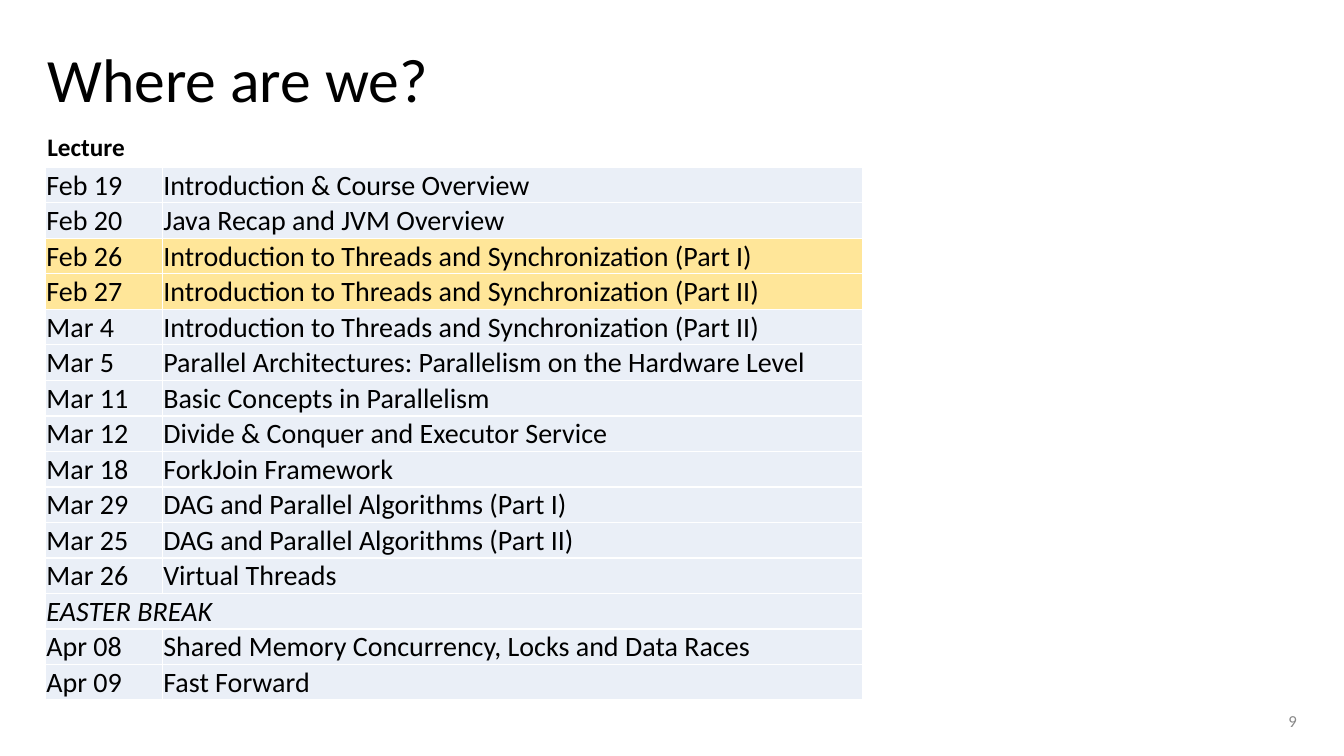
from dataclasses import dataclass

from lxml.etree import SubElement as Sub
from pptx import Presentation
from pptx.dml.color import RGBColor as Color
from pptx.enum.text import MSO_ANCHOR as Anchor, PP_ALIGN as Align
from pptx.oxml.ns import qn
from pptx.util import Inches, Pt


@dataclass(frozen=True)
class Theme:
    font: str = "Calibri"
    ink: str = "000000"
    muted: str = "888888"
    band: str = "EAEFF7"
    mark: str = "FFE699"
    rule: str = "FFFFFF"
    title: int = 44
    body: int = 20
    label: int = 18
    small: int = 12


THEME = Theme()
WIDE, HIGH = Inches(13.33), Inches(7.5)
DATE_SHARE = 14.32
MARKED = {"Feb 26", "Feb 27"}
PLAN = [
    ("Feb 19", "Introduction & Course Overview"),
    ("Feb 20", "Java Recap and JVM Overview"),
    ("Feb 26", "Introduction to Threads and Synchronization (Part I)"),
    ("Feb 27", "Introduction to Threads and Synchronization (Part II)"),
    ("Mar 4", "Introduction to Threads and Synchronization (Part II)"),
    ("Mar 5", "Parallel Architectures: Parallelism on the Hardware Level"),
    ("Mar 11", "Basic Concepts in Parallelism"),
    ("Mar 12", "Divide & Conquer and Executor Service"),
    ("Mar 18", "ForkJoin Framework"),
    ("Mar 29", "DAG and Parallel Algorithms (Part I)"),
    ("Mar 25", "DAG and Parallel Algorithms (Part II)"),
    ("Mar 26", "Virtual Threads"),
    ("EASTER BREAK", None),
    ("Apr 08", "Shared Memory Concurrency, Locks and Data Races"),
    ("Apr 09", "Fast Forward"),
]


def share(part, whole):
    return round(whole * part / 100)


def area(left, top, width, height):
    return share(left, WIDE), share(top, HIGH), share(width, WIDE), share(height, HIGH)


def write(frame, text, size=THEME.body, color=THEME.ink, bold=False,
          italic=False, align=Align.LEFT, line=1.0):
    para = frame.paragraphs[0]
    para.alignment = align
    para.line_spacing = line
    run = para.add_run()
    run.text = text
    font = run.font
    font.name, font.size = THEME.font, Pt(size)
    font.bold, font.italic = bold, italic
    font.color.rgb = Color.from_string(color)


def label(slide, box, text, anchor=Anchor.TOP, pad=0.05, **style):
    frame = slide.shapes.add_textbox(*box).text_frame
    frame.word_wrap = True
    frame.vertical_anchor = anchor
    frame.margin_top = frame.margin_bottom = Inches(pad)
    write(frame, text, **style)


def edge(cell):
    props = cell._tc.get_or_add_tcPr()
    for side in ("lnL", "lnR", "lnT", "lnB"):
        line = Sub(props, qn(f"a:{side}"), w=str(Pt(1)))
        fill = Sub(line, qn("a:solidFill"))
        Sub(fill, qn("a:srgbClr"), val=THEME.rule)


def paint(cell, color, anchor):
    edge(cell)
    cell.fill.solid()
    cell.fill.fore_color.rgb = Color.from_string(color)
    cell.vertical_anchor = anchor
    cell.margin_left = cell.margin_right = cell.margin_top = Inches(0.01)
    cell.margin_bottom = 0


def agenda(slide, box):
    width, height = box[2:]
    table = slide.shapes.add_table(len(PLAN), 2, *box).table
    table.first_row = table.horz_banding = False
    first = share(DATE_SHARE, width)
    table.columns[0].width = first
    table.columns[1].width = width - first
    for row, (date, topic) in enumerate(PLAN):
        table.rows[row].height = height // len(PLAN)
        day, theme = table.cell(row, 0), table.cell(row, 1)
        color = THEME.mark if date in MARKED else THEME.band
        paint(day, color, Anchor.MIDDLE)
        paint(theme, color, Anchor.BOTTOM)
        write(day.text_frame, date, italic=topic is None)
        if topic is None:
            day.merge(theme)
        else:
            write(theme.text_frame, topic)


def lecture(slide):
    label(slide, area(2.78, 2.67, 94.45, 16.53), "Where are we?",
          anchor=Anchor.MIDDLE, pad=0.1, size=THEME.title, line=0.9)
    label(slide, area(70.67, 92.67, 26.56, 5.33), "9",
          anchor=Anchor.MIDDLE, size=THEME.small, color=THEME.muted,
          align=Align.RIGHT)
    agenda(slide, area(3.38, 22.13, 60.77, 70.53))
    label(slide, area(2.78, 16.67, 18.68, 5.33), "Lecture",
          size=THEME.label, bold=True)


def main():
    deck = Presentation()
    deck.slide_width, deck.slide_height = WIDE, HIGH
    lecture(deck.slides.add_slide(deck.slide_layouts[6]))
    deck.save("out.pptx")


if __name__ == "__main__":
    main()
